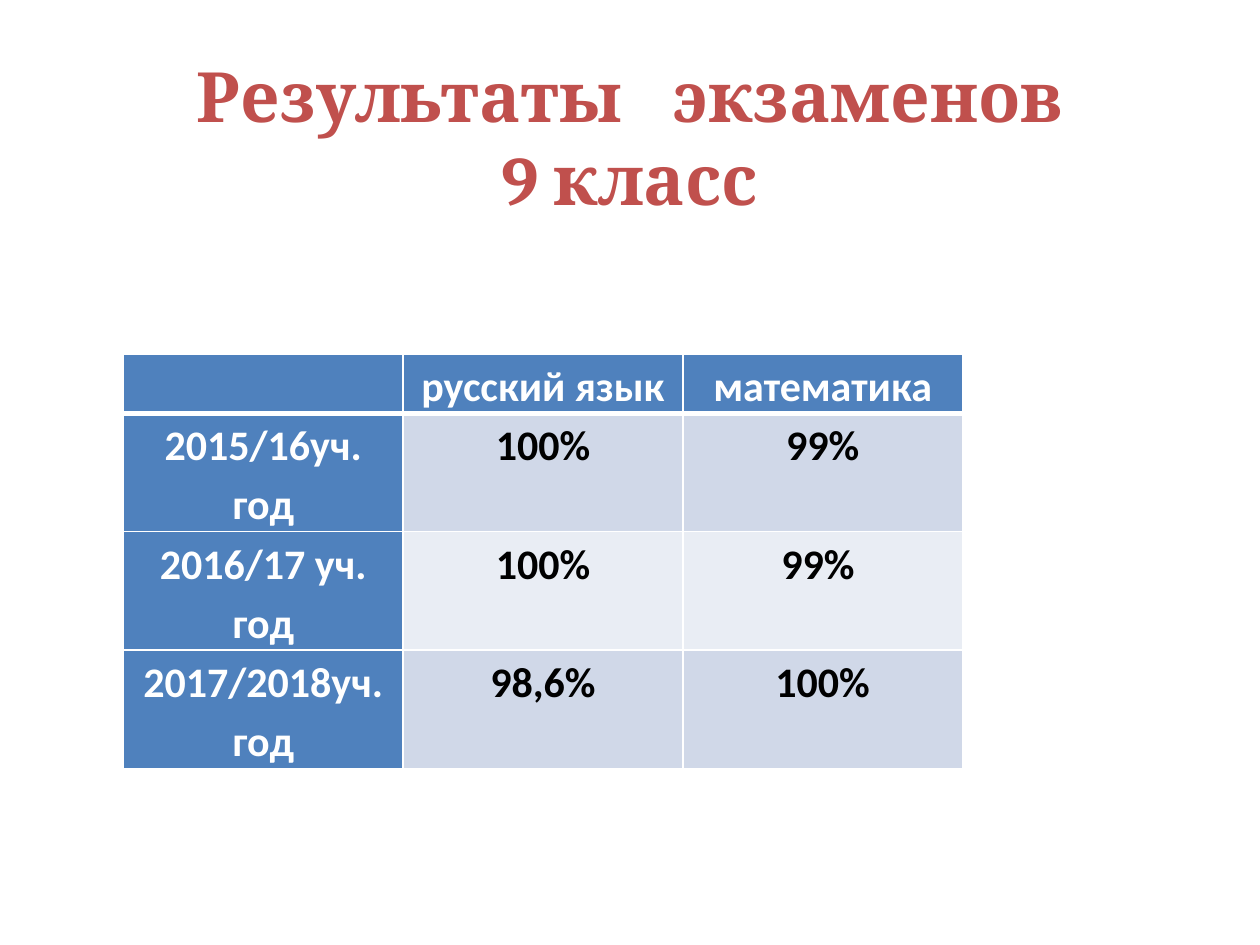
import dataclasses

import lxml.etree
import pptx
import pptx.dml.color
import pptx.enum.text
import pptx.oxml.ns
import pptx.slide
import pptx.table
import pptx.text.text
import pptx.util

Inches = pptx.util.Inches
Pt = pptx.util.Pt

COLORS = {
    "title": "C0504D",
    "header": "4F81BD",
    "odd_row": "D0D8E8",
    "even_row": "E9EDF4",
    "white": "FFFFFF",
    "black": "000000",
}
COLUMN_WIDTH = 2.22
HEADER_HEIGHT = 0.47
ROW_HEIGHT = 0.94


@dataclasses.dataclass(frozen=True)
class YearResult:
    year: str
    russian: str
    mathematics: str


HEADINGS = YearResult("", "русский язык", "математика")
RESULTS = [
    YearResult("2015/16уч. год", "100%", "99%"),
    YearResult("2016/17 уч. год", "100%", "99% "),
    YearResult("2017/2018уч.\nгод", "98,6%", "100%"),
]


def style_paragraph(para: pptx.text.text._Paragraph, font_name: str, size: float, color: str) -> None:
    para.alignment = pptx.enum.text.PP_ALIGN.CENTER
    para.font.name = font_name
    para.font.size = Pt(size)
    para.font.bold = True
    para.font.color.rgb = pptx.dml.color.RGBColor.from_string(COLORS[color])


def add_title(slide: pptx.slide.Slide) -> None:
    box = slide.shapes.add_textbox(Inches(0.5), Inches(0.3), Inches(9), Inches(1.56))
    frame = box.text_frame
    frame.word_wrap = True
    frame.vertical_anchor = pptx.enum.text.MSO_ANCHOR.MIDDLE
    para = frame.paragraphs[0]
    style_paragraph(para, "Cambria", 39.6, "title")
    para.add_run().text = "Результаты"
    wide_space = para.add_run()
    wide_space.text = " "
    wide_space.font._element.set("spc", "2000")
    para.add_run().text = "экзаменов"
    para.add_line_break()
    para.add_run().text = "9 класс"


def add_borders(cell: pptx.table._Cell, top: float, bottom: float) -> None:
    """Draw white lines on all four sides, with widths in points."""
    properties = cell._tc.get_or_add_tcPr()
    for side, width in {"L": 1, "R": 1, "T": top, "B": bottom}.items():
        line = lxml.etree.SubElement(properties, pptx.oxml.ns.qn(f"a:ln{side}"), w=str(Pt(width)))
        fill = lxml.etree.SubElement(line, pptx.oxml.ns.qn("a:solidFill"))
        lxml.etree.SubElement(fill, pptx.oxml.ns.qn("a:srgbClr"), val=COLORS["white"])


def fill_cell(cell: pptx.table._Cell, text: str, row: int, column: int) -> None:
    is_heading = row == 0 or column == 0
    add_borders(cell, top=3 if row == 1 else 1, bottom=3 if row == 0 else 1)
    band = "odd_row" if row % 2 else "even_row"
    cell.fill.solid()
    cell.fill.fore_color.rgb = pptx.dml.color.RGBColor.from_string(COLORS["header" if is_heading else band])
    cell.margin_left = cell.margin_right = Inches(0.07)
    cell.margin_top = cell.margin_bottom = Inches(0)
    cell.text_frame.text = text
    for para in cell.text_frame.paragraphs:
        style_paragraph(para, "Calibri", 24, "white" if is_heading else "black")
        para.line_spacing = 1.15


def add_results_table(slide: pptx.slide.Slide) -> None:
    records = [HEADINGS, *RESULTS]
    column_count = len(dataclasses.fields(YearResult))
    frame = slide.shapes.add_table(
        len(records), column_count, Inches(0.98), Inches(2.81),
        Inches(COLUMN_WIDTH * column_count), Inches(HEADER_HEIGHT + ROW_HEIGHT * len(RESULTS)),
    )
    table = frame.table
    for table_column in table.columns:
        table_column.width = Inches(COLUMN_WIDTH)
    for row, record in enumerate(records):
        table.rows[row].height = Inches(ROW_HEIGHT if row else HEADER_HEIGHT)
        for column, text in enumerate(dataclasses.astuple(record)):
            fill_cell(table.cell(row, column), text, row, column)


def main() -> None:
    deck = pptx.Presentation()
    deck.slide_width = Inches(10)
    deck.slide_height = Inches(7.5)
    slide = deck.slides.add_slide(deck.slide_layouts[6])
    add_title(slide)
    add_results_table(slide)
    deck.save("out.pptx")


if __name__ == "__main__":
    main()
